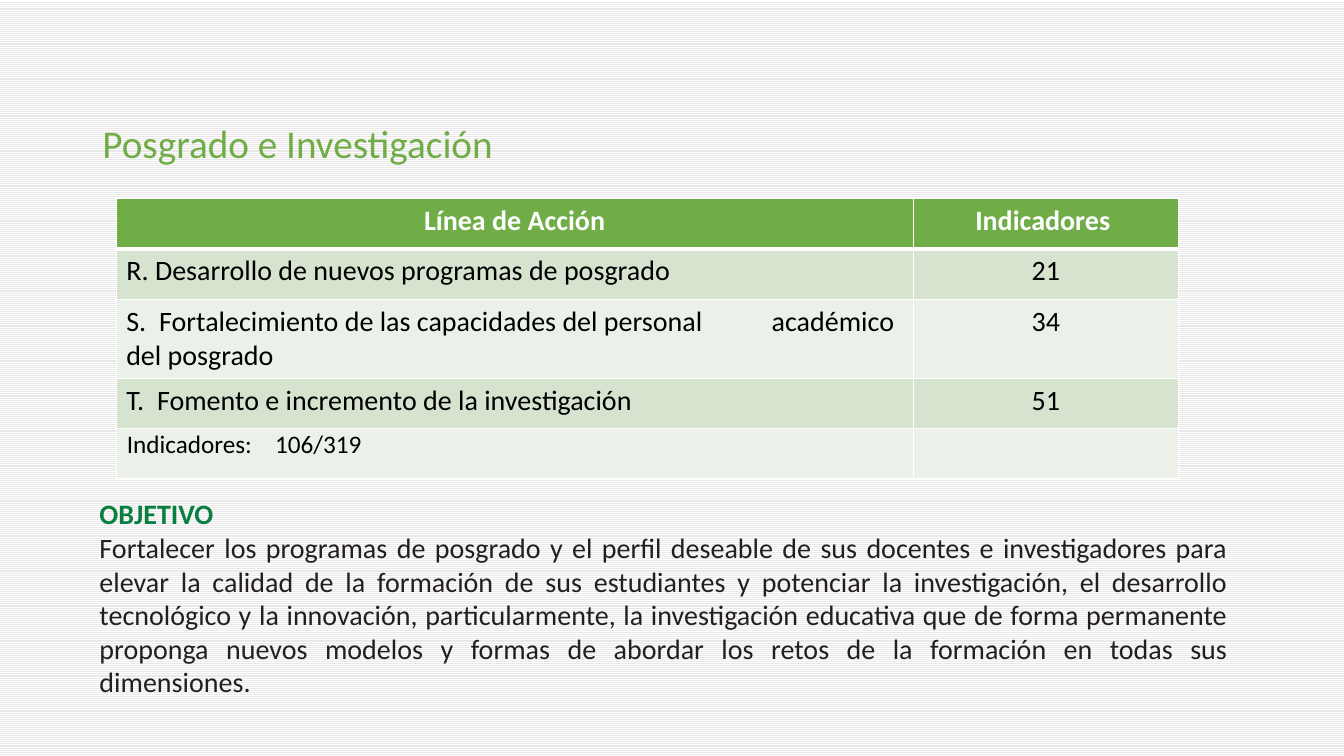
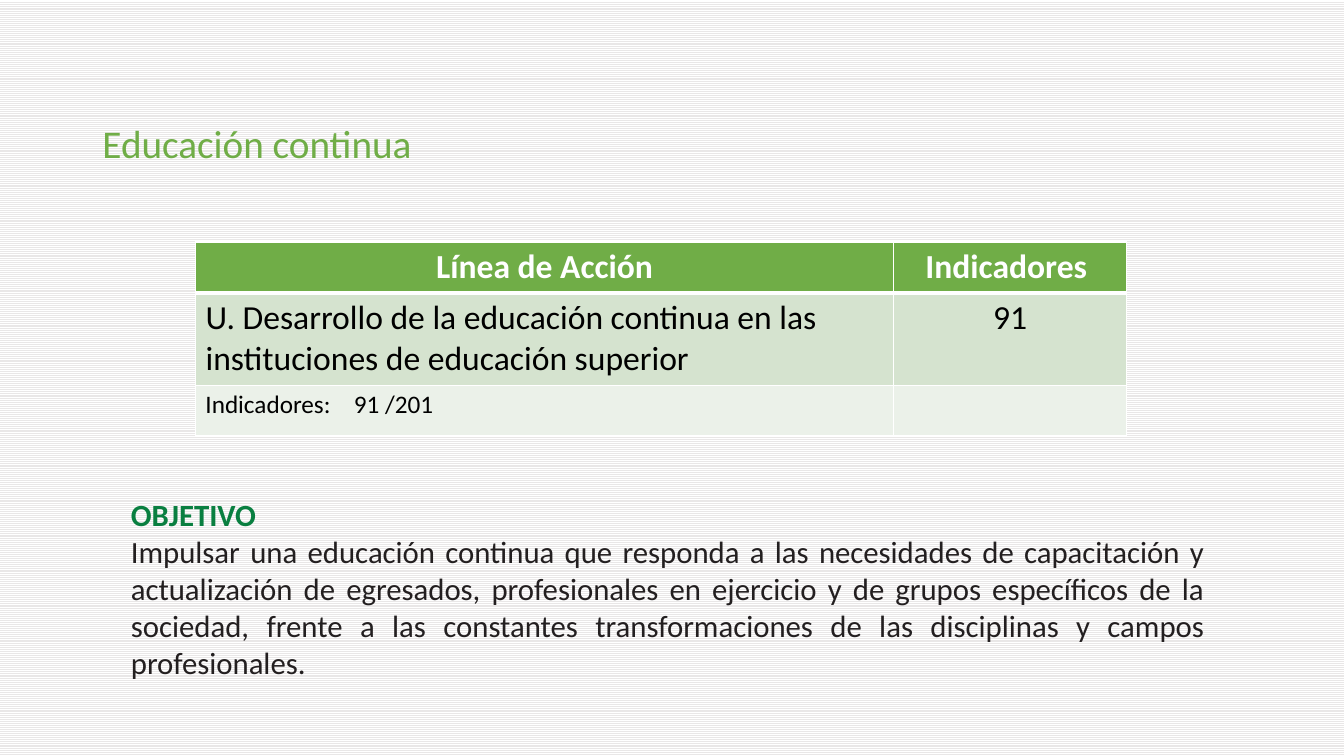
import pptx
import pptx.util
import pptx.dml.color
import pptx.enum.dml
import pptx.enum.text
import pptx.oxml
import pptx.oxml.ns
from dataclasses import dataclass
from lxml import etree

Pt = pptx.util.Pt
RGB = pptx.dml.color.RGBColor.from_string
ALIGN = pptx.enum.text.PP_ALIGN
ANCHOR = pptx.enum.text.MSO_ANCHOR
AUTOSIZE = pptx.enum.text.MSO_AUTO_SIZE


@dataclass(frozen=True)
class Theme:
    font: str = "Calibri"
    green: str = "70AD47"
    dark_green: str = "097F40"
    ink: str = "231F20"
    black: str = "000000"
    white: str = "FFFFFF"
    stripe: str = "E9E7E7"
    bands: tuple = ("D5E3CF", "EBF1E9")
    title_size: int = 28
    total_size: int = 18
    rule: int = 1
    header_rule: int = 3


THEME = Theme()

# Content: boxes are left, top, width[, height] in points
TITLE_BOX = (66, 75.6, 828, 57.6)
HEADERS = ("Línea de Acción", "Indicadores ")
TOTAL_TAB = 106
ROW_HEIGHT = 36
ACTION_SHARE = 0.75

SECTIONS = [
    {
        "title": "Posgrado e Investigación",
        "table_box": (83, 142, 759),
        "table_size": 20,
        # action line, indicators, row height, tab stops
        "actions": [
            ("R. Desarrollo de nuevos programas de posgrado", "21", ROW_HEIGHT, ()),
            ("S.\tFortalecimiento de las capacidades del personal\t"
             "académico del posgrado", "34", 56, (23.5, 461)),
            ("T.\tFomento e incremento de la investigación", "51", ROW_HEIGHT, (22,)),
        ],
        "total": "Indicadores:\t106/319",
        "total_box": (83.5, 302.4, 248.4, 28.8),
        "objective": "Fortalecer los programas de posgrado y el perfil deseable de sus "
                     "docentes e investigadores para elevar la calidad de la formación de "
                     "sus estudiantes y potenciar la investigación, el desarrollo "
                     "tecnológico y la innovación, particularmente, la investigación "
                     "educativa que de forma permanente proponga nuevos modelos y formas "
                     "de abordar los retos de la formación en todas sus dimensiones.",
        "objective_box": (64, 350.6, 820, 152.6),
        "objective_size": 20,
    },
    {
        "title": "Educación continua",
        "table_box": (139.7, 172.8, 665),
        "table_size": 24,
        "actions": [
            ("U. Desarrollo de la educación continua en las instituciones de "
             "educación superior", "91", 65, ()),
        ],
        "total": "Indicadores:\t91 /201",
        "total_box": (139.7, 273.6, 186.5, 28.8),
        "objective": "Impulsar una educación continua que responda a las necesidades de "
                     "capacitación y actualización de egresados, profesionales en "
                     "ejercicio y de grupos específicos de la sociedad, frente a las "
                     "constantes transformaciones de las disciplinas y campos "
                     "profesionales.",
        "objective_box": (86.4, 350, 781.2, 140.4),
        "objective_size": 22,
    },
]


def write(paragraph, text, size, color, bold=False, align=ALIGN.LEFT, tabs=()):
    paragraph.alignment = align
    if tabs:
        tab_list = etree.SubElement(paragraph._p.get_or_add_pPr(),
                                    pptx.oxml.ns.qn("a:tabLst"))
        for stop in tabs:
            etree.SubElement(tab_list, pptx.oxml.ns.qn("a:tab"),
                             pos=str(int(Pt(stop))), algn="l")
    run = paragraph.add_run()
    run.text = text
    for key, value in {"name": THEME.font, "size": Pt(size), "bold": bold}.items():
        setattr(run.font, key, value)
    run.font.color.rgb = RGB(color)


def style_cell(cell, fill, top, bottom):
    # Borders must precede the fill in the cell properties
    properties = cell._tc.get_or_add_tcPr()
    rules = {"lnL": THEME.rule, "lnR": THEME.rule, "lnT": top, "lnB": bottom}
    for side, weight in rules.items():
        line = etree.SubElement(properties, pptx.oxml.ns.qn(f"a:{side}"),
                                w=str(int(Pt(weight))))
        solid = etree.SubElement(line, pptx.oxml.ns.qn("a:solidFill"))
        etree.SubElement(solid, pptx.oxml.ns.qn("a:srgbClr"), val=THEME.white)
    cell.fill.solid()
    cell.fill.fore_color.rgb = RGB(fill)


def add_text_box(slide, box, anchor=ANCHOR.TOP):
    frame = slide.shapes.add_textbox(*map(Pt, box)).text_frame
    settings = {"word_wrap": True, "vertical_anchor": anchor,
                "auto_size": AUTOSIZE.SHAPE_TO_FIT_TEXT}
    for key, value in settings.items():
        setattr(frame, key, value)
    return frame


def add_title(slide, text):
    title = slide.shapes.title
    for key, value in zip(("left", "top", "width", "height"), TITLE_BOX):
        setattr(title, key, Pt(value))
    title.text_frame.vertical_anchor = ANCHOR.MIDDLE
    title.text_frame.auto_size = AUTOSIZE.NONE
    heading = title.text_frame.paragraphs[0]
    heading.line_spacing = 0.9
    write(heading, text, THEME.title_size, THEME.green)


def add_action_table(slide, section):
    # Header, action lines, and an empty row that carries the total
    rows = [(*HEADERS, ROW_HEIGHT, ()), *section["actions"], ("", "", ROW_HEIGHT, ())]
    left, top, width = section["table_box"]
    height = sum(row[2] for row in rows)
    table = slide.shapes.add_table(len(rows), 2, *map(Pt, (left, top, width, height))).table
    table.horz_banding = False
    for column, share in zip(table.columns, (ACTION_SHARE, 1 - ACTION_SHARE)):
        column.width = Pt(width * share)
    for r, (action, count, row_height, tabs) in enumerate(rows):
        table.rows[r].height = Pt(row_height)
        header = r == 0
        for c, text in enumerate((action, count)):
            cell = table.cell(r, c)
            style_cell(cell, THEME.green if header else THEME.bands[(r - 1) % 2],
                       THEME.header_rule if r == 1 else THEME.rule,
                       THEME.header_rule if header else THEME.rule)
            if text:
                write(cell.text_frame.paragraphs[0], text, section["table_size"],
                      THEME.white if header else THEME.black, header,
                      ALIGN.CENTER if header or c else ALIGN.LEFT, () if c else tabs)


def add_objective(slide, section):
    frame = add_text_box(slide, section["objective_box"], ANCHOR.MIDDLE)
    size = section["objective_size"]
    write(frame.paragraphs[0], "OBJETIVO", size, THEME.dark_green, True, ALIGN.JUSTIFY)
    write(frame.add_paragraph(), section["objective"], size, THEME.ink, False, ALIGN.JUSTIFY)


def main():
    deck = pptx.Presentation()
    deck.slide_width, deck.slide_height = Pt(960), Pt(540)

    # Shared striped background
    backdrop = deck.slide_master.background.fill
    backdrop.patterned()
    backdrop.pattern = pptx.enum.dml.MSO_PATTERN.LIGHT_HORIZONTAL
    backdrop.fore_color.rgb = RGB(THEME.stripe)
    backdrop.back_color.rgb = RGB(THEME.white)

    for section in SECTIONS:
        slide = deck.slides.add_slide(deck.slide_layouts[5])
        add_title(slide, section["title"])
        add_action_table(slide, section)
        total = add_text_box(slide, section["total_box"])
        write(total.paragraphs[0], section["total"], THEME.total_size, THEME.black,
              tabs=(TOTAL_TAB,))
        add_objective(slide, section)

    deck.save("out.pptx")


if __name__ == "__main__":
    main()
